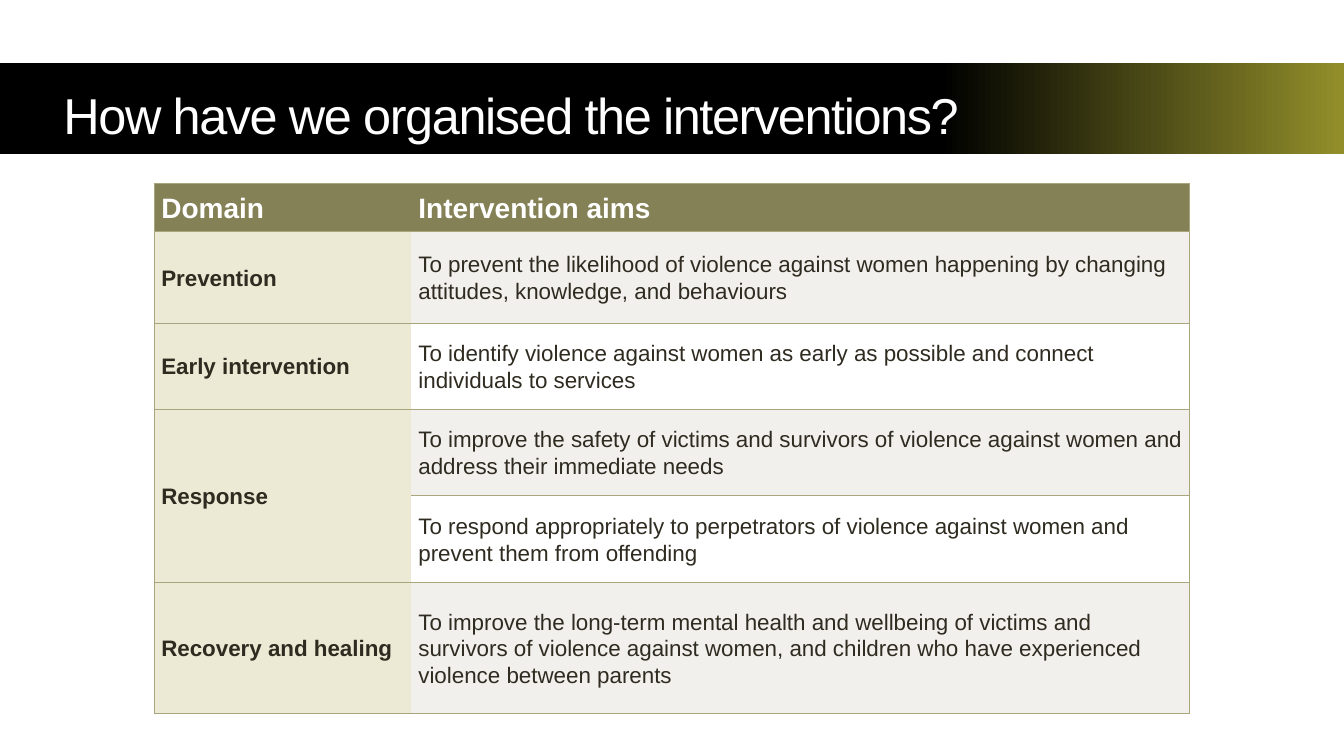
from lxml import etree
from pptx import Presentation
from pptx.dml.color import RGBColor
from pptx.enum import shapes, text
from pptx.oxml.ns import qn
from pptx.util import Inches, Pt

COLORS = {
    "black": "000000",
    "white": "FFFFFF",
    "olive": "928F2B",
    "header": "858157",
    "domain": "ECEAD4",
    "band": "F1F0EC",
    "border": "A9A57C",
    "ink": "2F2B20",
}


def color(name):
    return RGBColor.from_string(COLORS[name])


def add_border(cell, side, visible):
    line = etree.SubElement(cell._tc.get_or_add_tcPr(), qn("a:ln" + side), w=str(Pt(1)))
    if visible:
        fill = etree.SubElement(line, qn("a:solidFill"))
        etree.SubElement(fill, qn("a:srgbClr"), val=COLORS["border"])
    else:
        etree.SubElement(line, qn("a:noFill"))


deck = Presentation()
deck.slide_width = Inches(13.33)
deck.slide_height = Inches(7.5)
page = deck.slides.add_slide(deck.slide_layouts[6])

banner = page.shapes.add_shape(
    shapes.MSO_SHAPE.RECTANGLE, Inches(0), Inches(0.63), Inches(13.33), Inches(0.9)
)
banner.shadow.inherit = False
banner.line.fill.background()
banner.fill.gradient()
banner.fill.gradient_angle = 0
for stop, (position, name) in zip(banner.fill.gradient_stops, [(0.7, "black"), (1, "olive")]):
    stop.position = position
    stop.color.rgb = color(name)

frame = banner.text_frame
frame.word_wrap = True
frame.vertical_anchor = text.MSO_ANCHOR.MIDDLE
frame.margin_left = Inches(0.63)
frame.margin_top = Inches(0.2)
frame.margin_right = frame.margin_bottom = Inches(0.1)
para = frame.paragraphs[0]
para.alignment = text.PP_ALIGN.LEFT
span = para.add_run()
span.text = "How have we organised the interventions?"
span.font.name = "Arial"
span.font.size = Pt(36)
span.font.color.rgb = color("white")
span._r.get_or_add_rPr().set("spc", "-100")

rows = [
    ("Domain", "Intervention aims", 0.48),
    ("Prevention", "To prevent the likelihood of violence against women happening by changing "
     "attitudes, knowledge, and behaviours", 0.91),
    ("Early intervention", "To identify violence against women as early as possible and connect "
     "individuals to services", 0.85),
    ("Response", "To improve the safety of victims and survivors of violence against women "
     "and address their immediate needs", 0.86),
    (None, "To respond appropriately to perpetrators of violence against women and "
     "prevent them from offending", 0.86),
    ("Recovery and healing", "To improve the long-term mental health and wellbeing of victims and "
     "survivors of violence against women, and children who have experienced "
     "violence between parents", 1.3),
]
table = page.shapes.add_table(
    len(rows), 2, Inches(1.53), Inches(1.82), Inches(10.27), Inches(5.26)
).table
table.columns[0].width = Inches(2.55)
table.columns[1].width = Inches(7.72)
table.cell(3, 0).merge(table.cell(4, 0))

for row, (domain, aim, height) in enumerate(rows):
    table.rows[row].height = Inches(height)
    for column, words in enumerate((domain, aim)):
        if words is None:
            continue
        cell = table.cell(row, column)
        for side in "LRTB":
            add_border(cell, side, side != "RL"[column])
        if row == 0:
            fill_name = "header"
        elif column == 0:
            fill_name = "domain"
        else:
            fill_name = "band" if row % 2 else "white"
        cell.fill.solid()
        cell.fill.fore_color.rgb = color(fill_name)
        cell.vertical_anchor = text.MSO_ANCHOR.MIDDLE
        cell.margin_left = cell.margin_right = Inches(0.07)
        cell.margin_top = cell.margin_bottom = Inches(0)
        para = cell.text_frame.paragraphs[0]
        para.alignment = text.PP_ALIGN.LEFT
        para.line_spacing = 1.07
        para.space_after = Pt(8)
        span = para.add_run()
        span.text = words
        span.font.name = "Arial"
        span.font.size = Pt(20 if row == 0 else 16)
        span.font.bold = row == 0 or column == 0
        span.font.color.rgb = color("white" if row == 0 else "ink")

deck.save("out.pptx")
